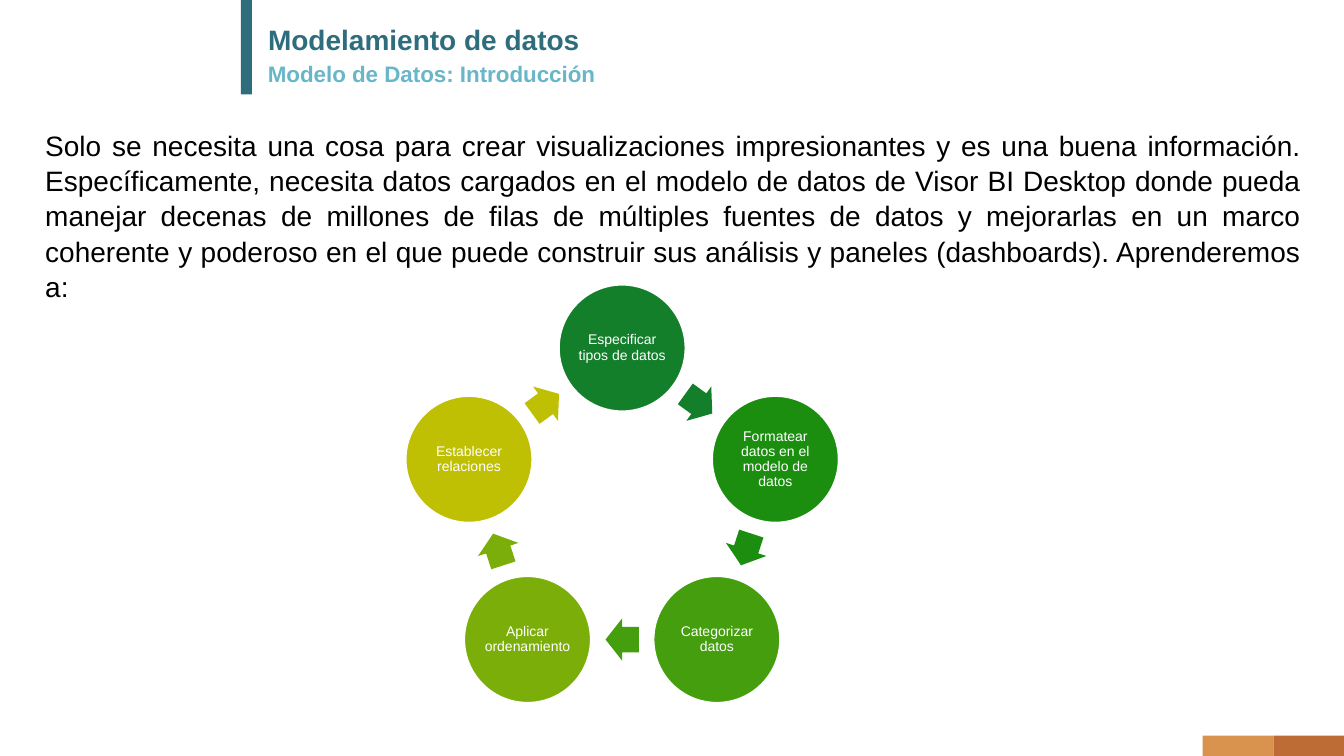
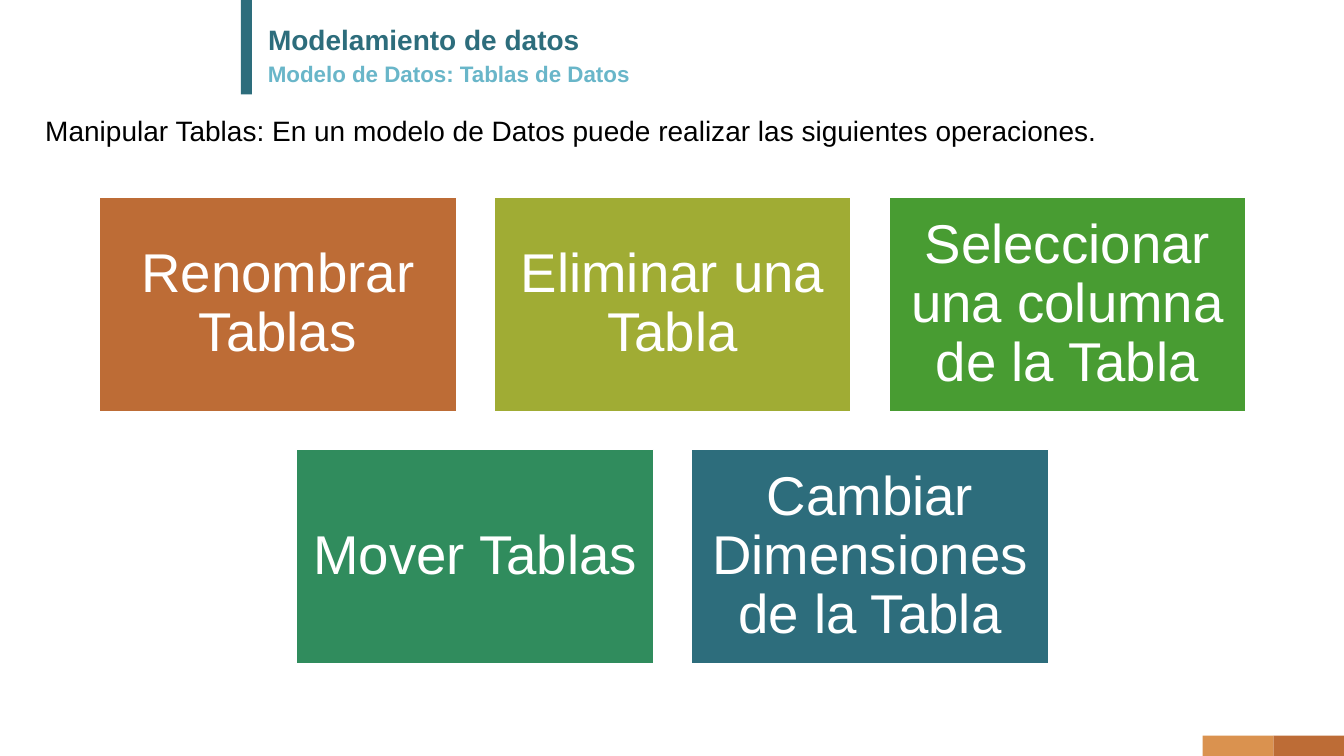
import math

import pptx
import pptx.dml.color
import pptx.enum.shapes
import pptx.enum.text
import pptx.util

Cm, Pt = pptx.util.Cm, pptx.util.Pt
ALIGN = pptx.enum.text.PP_ALIGN
ANCHOR = pptx.enum.text.MSO_ANCHOR
SHAPE = pptx.enum.shapes.MSO_SHAPE

FONT = "Arial"
COLORS = {
    "teal": "2D6D7C", "sky": "69B6C9", "sand": "DA924F", "rust": "BD6C36",
    "black": "000000", "white": "FFFFFF",
    "forest": "137F2B", "green": "1B8E10", "grass": "459E0D",
    "lime": "7CAE09", "mustard": "BFBF04",
    "olive": "A0AC34", "leaf": "489C32", "jade": "308C5D",
}
WIDTH, HEIGHT = 33.87, 19.05
TITLE = "Modelamiento de datos"
HEAD_LEFT, HEAD_WIDTH, HEAD_HEIGHT = 6.5, 26.54, 1.02

INTRO = {
    "subtitle": "Modelo de Datos: Introducción",
    "body": "Solo se necesita una cosa para crear visualizaciones impresionantes y es una "
            "buena información. Específicamente, necesita datos cargados en el modelo de "
            "datos de Visor BI Desktop donde pueda manejar decenas de millones de filas de "
            "múltiples fuentes de datos y mejorarlas en un marco coherente y poderoso en el "
            "que puede construir sus análisis y paneles (dashboards). Aprenderemos a:",
    "body_box": (3.07, 4.52),
    "steps": [
        ("Especificar tipos de datos", "forest"),
        ("Formatear datos en el modelo de datos", "green"),
        ("Categorizar datos", "grass"),
        ("Aplicar ordenamiento", "lime"),
        ("Establecer relaciones", "mustard"),
    ],
}
TABLES = {
    "subtitle": "Modelo de Datos: Tablas de Datos",
    "body": "Manipular Tablas: En un modelo de Datos puede realizar las siguientes operaciones.",
    "body_box": (2.69, 1.12),
    "rows": [
        [("Renombrar Tablas", "rust"), ("Eliminar una Tabla", "olive"),
         ("Seleccionar una columna de la Tabla", "leaf")],
        [("Mover Tablas", "jade"), ("Cambiar Dimensiones de la Tabla", "teal")],
    ],
}


def rgb(name):
    return pptx.dml.color.RGBColor.from_string(COLORS[name])


def write(tf, text, size, color, bold=False, align=ALIGN.LEFT, spacing=0.9,
          anchor=ANCHOR.TOP):
    tf.word_wrap = True
    tf.vertical_anchor = anchor
    p = tf.paragraphs[0]
    p.text = text
    p.alignment = align
    p.line_spacing = spacing
    p.font.name, p.font.size, p.font.bold = FONT, Pt(size), bold
    p.font.color.rgb = rgb(color)


def add_textbox(s, left, top, width, height):
    return s.shapes.add_textbox(Cm(left), Cm(top), Cm(width), Cm(height)).text_frame


def add_block(s, kind, left, top, width, height, color, outlined=False):
    sp = s.shapes.add_shape(kind, Cm(left), Cm(top), Cm(width), Cm(height))
    sp.shadow.inherit = False
    sp.fill.solid()
    sp.fill.fore_color.rgb = rgb(color)
    if outlined:
        sp.line.color.rgb = rgb("white")
        sp.line.width = Pt(1)
    else:
        sp.line.fill.background()
    return sp


def label(sp, text, size, margin):
    tf = sp.text_frame
    tf.margin_left = tf.margin_right = tf.margin_top = tf.margin_bottom = Cm(margin)
    write(tf, text, size, "white", align=ALIGN.CENTER, anchor=ANCHOR.MIDDLE)


def decorate_layout(layout, s):
    """Draw the bands on slide s and move them to its layout; place the title there."""
    band_w, band_h = 1.78, 0.51
    bands = [add_block(s, SHAPE.RECTANGLE, 6.07, 0, 0.28, 2.38, "teal")]
    for i, color in enumerate(("rust", "sand"), start=1):
        bands.append(add_block(s, SHAPE.RECTANGLE, WIDTH - i * band_w, HEIGHT - band_h,
                               band_w, band_h, color))
    for sp in bands:
        layout.shapes.element.append(sp.element)
    title = layout.placeholders[0]
    title.left, title.top = Cm(HEAD_LEFT), Cm(0.53)
    title.width, title.height = Cm(HEAD_WIDTH), Cm(HEAD_HEIGHT)


def add_heading(s, content):
    write(s.shapes.title.text_frame, TITLE, 20, "teal", bold=True, anchor=ANCHOR.MIDDLE)
    write(add_textbox(s, HEAD_LEFT, 1.47, HEAD_WIDTH, HEAD_HEIGHT),
          content["subtitle"], 16, "sky", bold=True)
    top, height = content["body_box"]
    write(add_textbox(s, 0.89, top, 32.16, height), content["body"], 20, "black",
          align=ALIGN.JUSTIFY, spacing=1.05)


def add_cycle(s, steps):
    center_x, center_y, radius = 15.68, 12.83, 4.06
    diameter, arrow_w, arrow_h = 3.18, 0.84, 1.07
    turn = 360 / len(steps)
    arrow_radius = radius * math.cos(math.radians(turn / 2))

    def corner(angle, distance, width, height):
        a = math.radians(angle)
        return (center_x + distance * math.sin(a) - width / 2,
                center_y - distance * math.cos(a) - height / 2)

    for i, (text, color) in enumerate(steps):
        left, top = corner(i * turn, radius, diameter, diameter)
        circle = add_block(s, SHAPE.OVAL, left, top, diameter, diameter, color, True)
        label(circle, text, 10, 0.03)
        heading = (i + 0.5) * turn
        left, top = corner(heading, arrow_radius, arrow_w, arrow_h)
        arrow = add_block(s, SHAPE.RIGHT_ARROW, left, top, arrow_w, arrow_h, color)
        arrow.adjustments[0], arrow.adjustments[1] = 0.6, 0.5
        arrow.rotation = heading


def add_cards(s, rows):
    center_x, first_top, width, height, gap = 16.95, 4.98, 9, 5.4, 0.95
    for r, row in enumerate(rows):
        row_width = len(row) * (width + gap) - gap
        for c, (text, color) in enumerate(row):
            card = add_block(s, SHAPE.RECTANGLE, center_x - row_width / 2 + c * (width + gap),
                             first_top + r * (height + gap), width, height, color, True)
            label(card, text, 39, 0.4)


def main():
    prs = pptx.Presentation()
    prs.slide_width, prs.slide_height = Cm(WIDTH), Cm(HEIGHT)
    layout = prs.slide_layouts[5]

    s = prs.slides.add_slide(layout)
    decorate_layout(layout, s)
    add_heading(s, INTRO)
    add_cycle(s, INTRO["steps"])

    s = prs.slides.add_slide(layout)
    add_heading(s, TABLES)
    add_cards(s, TABLES["rows"])

    prs.save("out.pptx")


if __name__ == "__main__":
    main()
